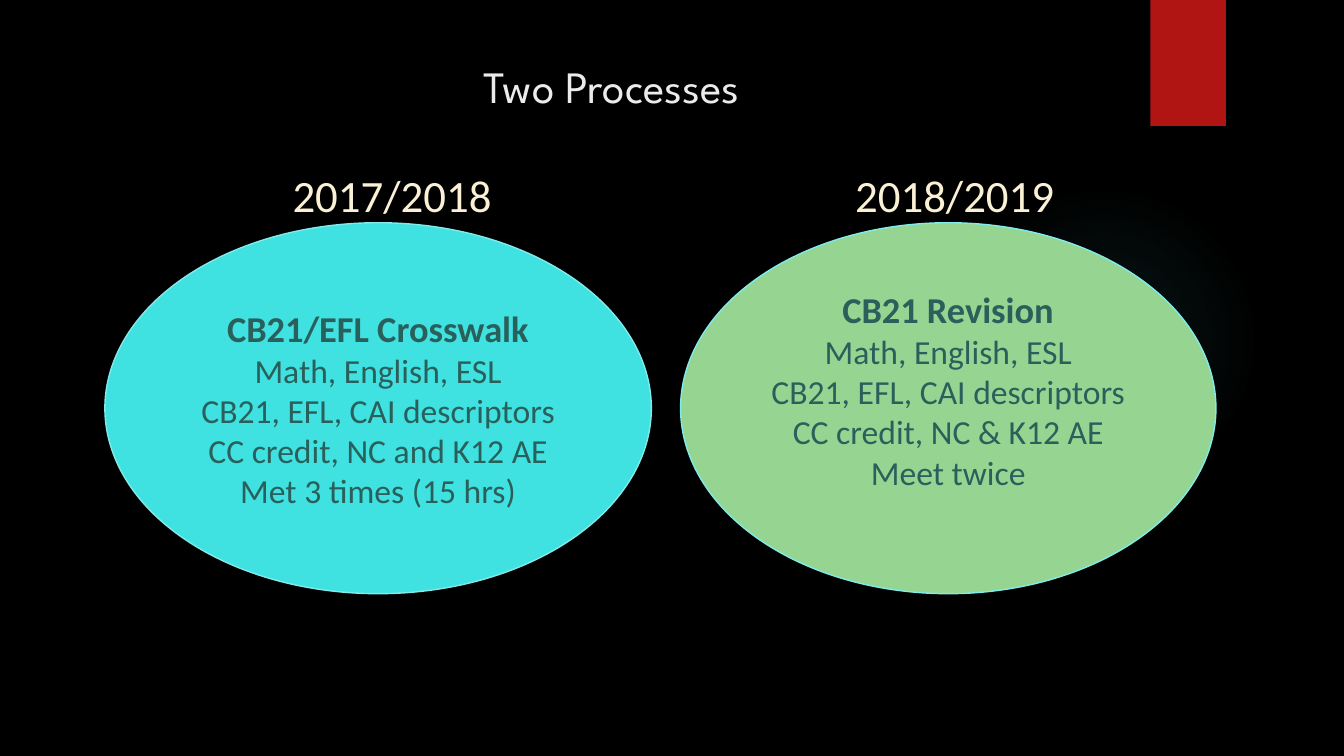
from lxml import etree
from pptx import Presentation
from pptx.dml.color import RGBColor
from pptx.enum.shapes import MSO_SHAPE
from pptx.enum.text import MSO_ANCHOR, PP_ALIGN
from pptx.oxml import parse_xml
from pptx.util import Inches, Pt

OVAL, RECT = MSO_SHAPE.OVAL, MSO_SHAPE.RECTANGLE
MIDDLE, CENTER, LEFT = MSO_ANCHOR.MIDDLE, PP_ALIGN.CENTER, PP_ALIGN.LEFT
DRAWING_NS = "http://schemas.openxmlformats.org/drawingml/2006/main"

THEME = {
    "background": "000000", "title": "EBEBEB", "year": "FAF1D4",
    "body": "2A605B", "outline": "7FEBEB", "tab": "B01513", "glow": "50B9C1",
    "title_font": "League Spartan", "body_font": "Calibri",
    "title_size": 32, "year_size": 32, "heading_size": 26, "body_size": 24,
}
TITLE = "Two Processes"
PROCESSES = [
    {"year": "2018/2019", "year_left": 8.07, "left": 6.75, "width": 5.31,
     "fill": "96D591", "bottom_inset": 0.42,
     "lines": ["CB21 Revision", "Math, English, ESL", "CB21, EFL, CAI descriptors",
               "CC credit, NC & K12 AE", "Meet twice"]},
    {"year": "2017/2018", "year_left": 2.49, "left": 1.04, "width": 5.42,
     "fill": "40E1E1", "bottom_inset": 0.05,
     "lines": ["CB21/EFL Crosswalk", "Math, English, ESL", "CB21, EFL, CAI descriptors",
               "CC credit, NC and K12 AE", "Met 3 times (15 hrs)"]},
]
OVAL_TOP, OVAL_HEIGHT = 2.21, 3.68
YEAR_WIDTH, YEAR_HEIGHT = 2.8, 0.5
GLOW_STOPS = [(0, 7), (36, 6), (69, 0)]


def color(name):
    return RGBColor.from_string(THEME[name])


def box(left, top, width, height):
    return [Inches(v) for v in (left, top, width, height)]


def style(p, font, size, ink, bold=False, align=CENTER):
    p.alignment = align
    p.font.name = THEME[font]
    p.font.size = Pt(THEME[size])
    p.font.color.rgb = color(ink)
    p.font.bold = bold


def add_plain(slide, kind, bounds, fill):
    sp = slide.shapes.add_shape(kind, *box(*bounds))
    sp.shadow.inherit = False
    sp.fill.solid()
    sp.fill.fore_color.rgb = RGBColor.from_string(fill)
    sp.line.fill.background()
    return sp


def add_glow(slide):
    sp = add_plain(slide, OVAL, (9.41, 1.83, 3.08, 3.08), THEME["glow"])
    stops = "".join(
        f'<a:gs pos="{pos * 1000}"><a:srgbClr val="{THEME["glow"]}">'
        f'<a:alpha val="{alpha * 1000}"/></a:srgbClr></a:gs>'
        for pos, alpha in GLOW_STOPS)
    gradient = parse_xml(
        f'<a:gradFill xmlns:a="{DRAWING_NS}"><a:gsLst>{stops}</a:gsLst><a:path path="circle">'
        '<a:fillToRect l="50000" t="50000" r="50000" b="50000"/></a:path></a:gradFill>')
    solid = sp.element.spPr.find(etree.QName(DRAWING_NS, "solidFill").text)
    solid.getparent().replace(solid, gradient)


def add_process(slide, process):
    bounds = (process["left"], OVAL_TOP, process["width"], OVAL_HEIGHT)
    sp = add_plain(slide, OVAL, bounds, process["fill"])
    sp.line.color.rgb = color("outline")
    sp.line.width = Pt(1)
    tf = sp.text_frame
    tf.word_wrap = True
    tf.vertical_anchor = MIDDLE
    tf.margin_bottom = Inches(process["bottom_inset"])
    tf.text = "\n".join(process["lines"])
    for i, p in enumerate(tf.paragraphs):
        style(p, "body_font", "body_size" if i else "heading_size", "body", bold=i == 0)

    year_top = OVAL_TOP - YEAR_HEIGHT
    year = slide.shapes.add_textbox(*box(process["year_left"], year_top, YEAR_WIDTH, YEAR_HEIGHT))
    tf = year.text_frame
    tf.word_wrap = True
    tf.vertical_anchor = MIDDLE
    tf.text = process["year"]
    p = tf.paragraphs[0]
    p.line_spacing = 0.9
    style(p, "body_font", "year_size", "year")


def main():
    prs = Presentation()
    prs.slide_width, prs.slide_height = Inches(13.33), Inches(7.5)
    slide = prs.slides.add_slide(prs.slide_layouts[5])
    slide.background.fill.solid()
    slide.background.fill.fore_color.rgb = color("background")

    add_glow(slide)
    add_plain(slide, RECT, (11.41, 0, 0.75, 1.25), THEME["tab"])
    for process in PROCESSES:
        add_process(slide, process)

    title = slide.shapes.title
    title.left, title.top, title.width, title.height = box(4.7, 0.47, 4.1, 0.75)
    title.text_frame.text = TITLE
    title.text_frame.vertical_anchor = MIDDLE
    style(title.text_frame.paragraphs[0], "title_font", "title_size", "title", align=LEFT)
    prs.save("out.pptx")


if __name__ == "__main__":
    main()
